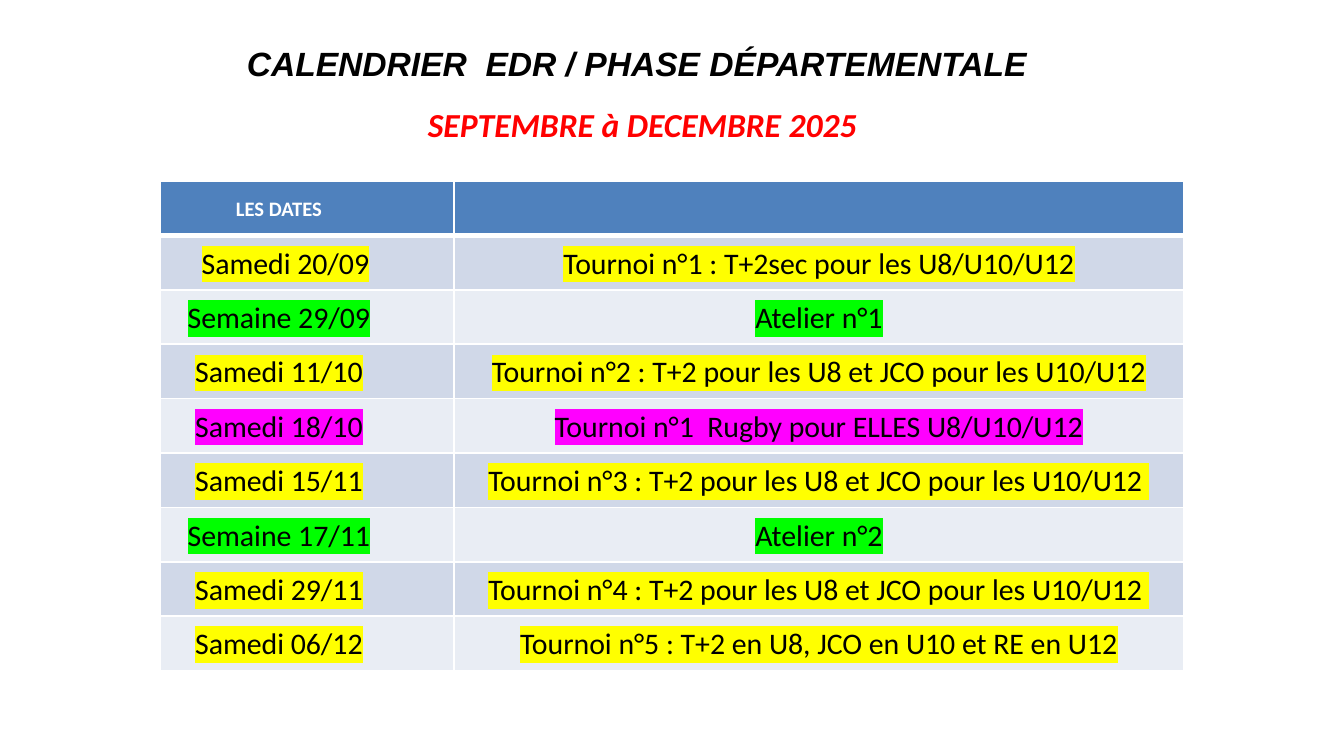
from dataclasses import dataclass

from lxml import etree
from pptx import Presentation
from pptx import util as u
from pptx.dml.color import RGBColor
from pptx.enum import text
from pptx.oxml import ns

SLIDE = (1344, 756)
TITLE = (195, 39, 884, 169)
TABLE_LEFT, TABLE_TOP, TABLE_HEIGHT = 160, 181, 490
COLUMNS = (294, 730)
CELL_INSET = 9
DATE_INSET = 65
FIRST_DATE_INSET = 52


@dataclass(frozen=True)
class Theme:
    heading_font: str = "Arial"
    body_font: str = "Calibri"
    title_size: int = 18
    header_size: int = 11
    body_size: int = 16
    black: str = "000000"
    white: str = "FFFFFF"
    red: str = "FF0000"
    header_fill: str = "4F81BD"
    bands: tuple = ("D0D8E8", "E9EDF4")
    yellow: str = "FFFF00"
    green: str = "00FF00"
    magenta: str = "FF00FF"


theme = Theme()

TITLE_LINES = [
    # text, font, colour, space before (pt), left indent (px)
    ("CALENDRIER  EDR / PHASE DÉPARTEMENTALE", theme.heading_font, theme.black, 0, 0),
    ("SEPTEMBRE à DECEMBRE 2025", theme.body_font, theme.red, 11, 11),
]
HEADER = ("LES DATES", "")
EVENTS = [
    ("Samedi 20/09", "Tournoi n°1 : T+2sec pour les U8/U10/U12", theme.yellow),
    ("Semaine 29/09", "Atelier n°1", theme.green),
    ("Samedi 11/10", "Tournoi n°2 : T+2 pour les U8 et JCO pour les U10/U12", theme.yellow),
    ("Samedi 18/10", "Tournoi n°1  Rugby pour ELLES U8/U10/U12", theme.magenta),
    ("Samedi 15/11", "Tournoi n°3 : T+2 pour les U8 et JCO pour les U10/U12 ", theme.yellow),
    ("Semaine 17/11", "Atelier n°2", theme.green),
    ("Samedi 29/11", "Tournoi n°4 : T+2 pour les U8 et JCO pour les U10/U12 ", theme.yellow),
    ("Samedi 06/12", "Tournoi n°5 : T+2 en U8, JCO en U10 et RE en U12", theme.yellow),
]


def px(length):
    return u.Emu(round(length * 914400 / 134.4))


def add_span(para, words, font, size, color, bold=False, italic=False, highlight=None):
    span = para.add_run()
    span.text = words
    span.font.size = u.Pt(size)
    span.font.bold = bold
    span.font.italic = italic
    span.font.color.rgb = RGBColor.from_string(color)
    if highlight:
        mark = etree.SubElement(span.font._element, ns.qn("a:highlight"))
        etree.SubElement(mark, ns.qn("a:srgbClr"), val=highlight)
    span.font.name = font


def add_borders(cell, bottom):
    """Draw white cell borders, 1 pt wide except for the given bottom width."""
    properties = cell._tc.get_or_add_tcPr()
    for side, width in (("L", 1), ("R", 1), ("T", 1), ("B", bottom)):
        line = etree.SubElement(properties, ns.qn(f"a:ln{side}"), w=str(u.Pt(width)))
        fill = etree.SubElement(line, ns.qn("a:solidFill"))
        etree.SubElement(fill, ns.qn("a:srgbClr"), val=theme.white)


def fill_cell(cell, words, fill, right_inset, highlight=None, header=False):
    add_borders(cell, 3 if header else 1)
    cell.fill.solid()
    cell.fill.fore_color.rgb = RGBColor.from_string(fill)
    cell.vertical_anchor = text.MSO_ANCHOR.MIDDLE
    cell.margin_left, cell.margin_right = px(CELL_INSET), px(right_inset)
    cell.margin_top = cell.margin_bottom = 0
    para = cell.text_frame.paragraphs[0]
    para.alignment = text.PP_ALIGN.CENTER
    para.line_spacing = 1.07
    para.space_after = u.Pt(8)
    if words:
        size = theme.header_size if header else theme.body_size
        color = theme.white if header else theme.black
        add_span(para, words, theme.body_font, size, color, bold=header, highlight=highlight)


def add_title(page):
    box = page.shapes.title
    box.left, box.top, box.width, box.height = map(px, TITLE)
    frame = box.text_frame
    frame.word_wrap = True
    frame.auto_size = text.MSO_AUTO_SIZE.NONE
    frame.vertical_anchor = text.MSO_ANCHOR.TOP
    frame.margin_left = frame.margin_right = frame.margin_bottom = 0
    frame.margin_top = px(4)
    for index, (words, font, color, before, indent) in enumerate(TITLE_LINES):
        para = frame.add_paragraph() if index else frame.paragraphs[0]
        para.alignment = text.PP_ALIGN.CENTER
        para.space_before = u.Pt(before)
        para._p.get_or_add_pPr().set("marL", str(px(indent)))
        add_span(para, words, font, theme.title_size, color, bold=True, italic=True)


def add_calendar(page):
    count = len(EVENTS) + 1
    frame = page.shapes.add_table(count, len(COLUMNS), px(TABLE_LEFT), px(TABLE_TOP),
                                  px(sum(COLUMNS)), px(TABLE_HEIGHT))
    table = frame.table
    for column, width in zip(table.columns, COLUMNS):
        column.width = px(width)
    for row in table.rows:
        row.height = px(TABLE_HEIGHT / count)
    for column, (words, inset) in enumerate(zip(HEADER, (DATE_INSET, CELL_INSET))):
        fill_cell(table.cell(0, column), words, theme.header_fill, inset, header=True)
    for index, (date, event, highlight) in enumerate(EVENTS):
        band = theme.bands[index % 2]
        date_inset = DATE_INSET if index else FIRST_DATE_INSET
        fill_cell(table.cell(index + 1, 0), date, band, date_inset, highlight)
        fill_cell(table.cell(index + 1, 1), event, band, CELL_INSET, highlight)


def main():
    deck = Presentation()
    deck.slide_width, deck.slide_height = map(px, SLIDE)
    page = deck.slides.add_slide(deck.slide_layouts[5])
    add_title(page)
    add_calendar(page)
    deck.save("out.pptx")


if __name__ == "__main__":
    main()
